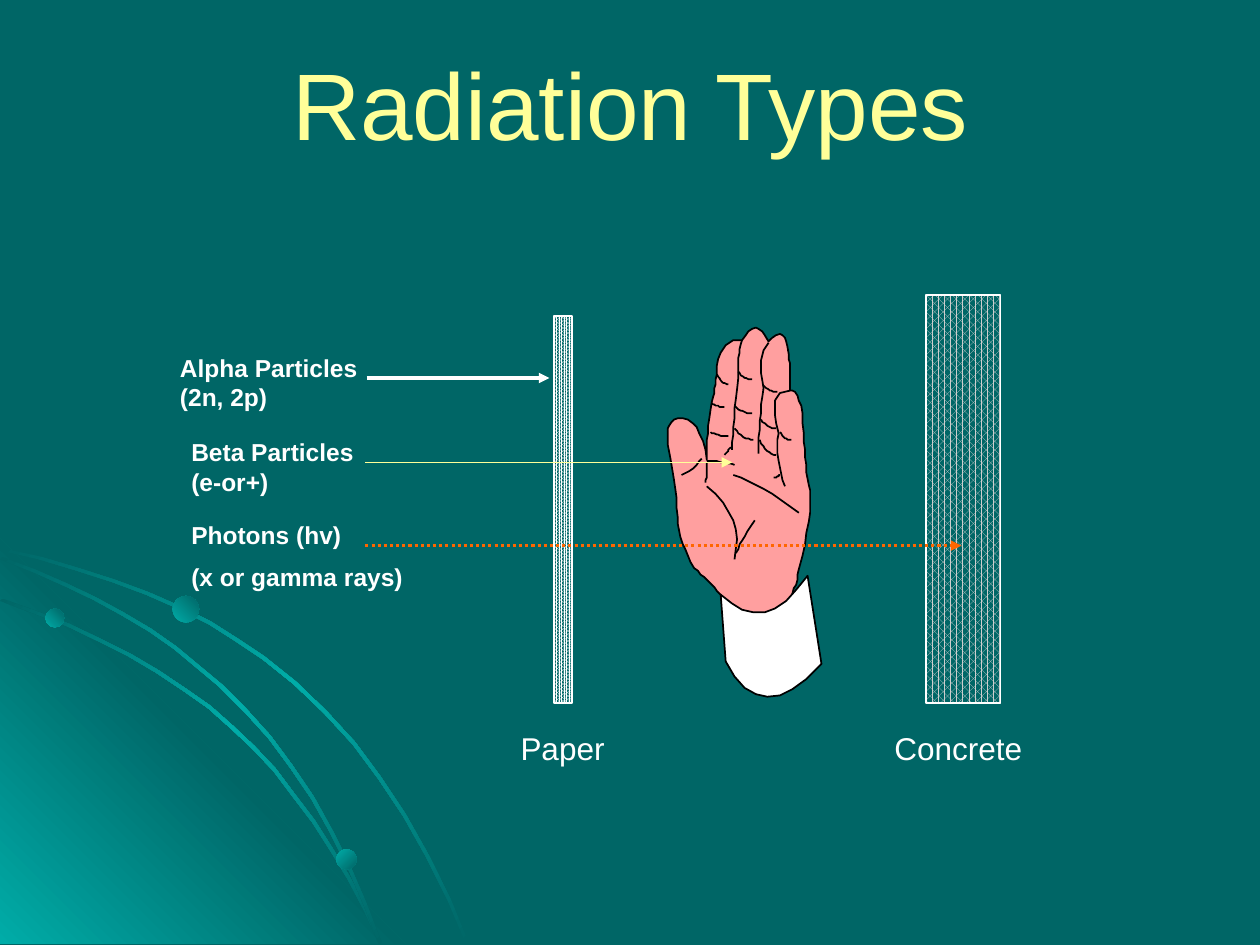
from copy import deepcopy
from pptx import Presentation
from pptx.dml.color import RGBColor
from pptx.enum.dml import MSO_LINE as DASH, MSO_PATTERN as PAT
from pptx.enum.shapes import MSO_CONNECTOR as CONN, MSO_SHAPE as SHAPE
from pptx.enum.text import MSO_ANCHOR as ANCHOR, PP_ALIGN as ALIGN
from pptx.oxml.ns import qn
from pptx.oxml.xmlchemy import OxmlElement as Elem
from pptx.util import Inches, Pt

TEAL = RGBColor(0x00, 0x66, 0x66)
AQUA = RGBColor(0x00, 0xAC, 0xA8)
CREAM = RGBColor(0xFF, 0xFF, 0x99)
WHITE = RGBColor(0xFF, 0xFF, 0xFF)
BLACK = RGBColor(0x00, 0x00, 0x00)
SKIN = RGBColor(0xFF, 0x9F, 0x9F)
GREY = RGBColor(0xCE, 0xCE, 0xCE)
RUST = RGBColor(0xFF, 0x66, 0x00)

deck = Presentation()
deck.slide_width, deck.slide_height = Inches(10), Inches(7.5)
slide = deck.slides.add_slide(deck.slide_layouts[5])
slide.background.fill.solid()
slide.background.fill.fore_color.rgb = TEAL
shapes = slide.shapes


def bend(knots, steps=8):
    points = [knots[0]]
    for start, pull, end in zip(knots[::2], knots[1::2], knots[2::2]):
        for step in range(1, steps + 1):
            t = step / steps
            points.append(tuple(round((1 - t) ** 2 * a + 2 * t * (1 - t) * b + t * t * c)
                                for a, b, c in zip(start, pull, end)))
    return points


def trace(points, close):
    pen = shapes.build_freeform(*points[0], scale=Inches(0.01))
    pen.add_line_segments(points[1:], close=close)
    shape = pen.convert_to_shape()
    shape.shadow.inherit = False
    return shape


arcs = [
    [(0, 436), (128, 463), (208, 522), (312, 599), (370, 749)],
    [(0, 476), (112, 513), (183, 577), (253, 640), (301, 749)],
    [(0, 443), (106, 481), (174, 544), (256, 620), (301, 749)]]
glows = [(trace([(0, 427), (322, 749), (0, 749)], True), (AQUA, TEAL, AQUA), 45)]
for arc in arcs:
    points = bend(arc)
    upper = [(x + 2, y - 1) for x, y in points]
    lower = [(x, y + 1) for x, y in reversed(points)]
    glows.append((trace(upper + lower, True), (TEAL, AQUA, TEAL), 315))
for x, y, size, angle in [(0.36, 4.83, 0.15, 45), (2.67, 6.74, 0.16, 315),
                          (1.37, 4.73, 0.21, 45)]:
    ball = shapes.add_shape(SHAPE.OVAL, Inches(x), Inches(y), Inches(size), Inches(size))
    ball.shadow.inherit = False
    glows.append((ball, (AQUA, TEAL), angle))

for shape, colors, angle in glows:
    shape.line.fill.background()
    fill = shape.fill
    fill.gradient()
    fill.gradient_angle = angle
    stops = shape._element.spPr.find(".//" + qn("a:gsLst"))
    if len(colors) == 3:
        stops.append(deepcopy(stops[0]))
    for i, (stop, color) in enumerate(zip(fill.gradient_stops, colors)):
        stop.color.rgb = color
        stop.position = i / (len(colors) - 1)

palm = [
    (593, 492), (580, 485), (572, 472), (562, 460), (551, 451), (539, 432), (538, 411),
    (536, 378), (531, 358), (526, 336), (538, 332), (556, 330), (561, 365), (560, 345),
    (565, 319), (569, 305), (569, 290), (573, 268), (589, 270), (600, 250), (610, 271),
    (624, 256), (626, 281), (628, 295), (627, 310), (636, 308), (638, 344), (639, 372),
    (643, 389), (645, 408), (634, 452), (632, 468), (624, 481), (611, 490), (593, 492)]
folds = [
    [(627, 310), (608, 310), (618, 344), (615, 366), (623, 386)],
    [(610, 272), (600, 283), (606, 308), (602, 335), (602, 360)],
    [(589, 270), (585, 283), (586, 300), (582, 335), (581, 357)],
    [(557, 364), (550, 374), (541, 377)],
    [(583, 369), (572, 366), (561, 366)],
    [(619, 377), (617, 379), (614, 379)],
    [(583, 444), (591, 411), (561, 386)],
    [(584, 439), (590, 425), (599, 413)],
    [(582, 377), (604, 385), (634, 407)],
    [(580, 355), (578, 358), (575, 361)],
    [(560, 383), (562, 374), (561, 367)]]
for x, y, width, drop in [(564, 343, 14, 3), (583, 340, 15, 9), (603, 349, 13, 12),
                          (565, 320, 10, 3), (583, 322, 14, 6), (586, 295, 11, 6),
                          (606, 306, 11, 5), (604, 333, 12, 7), (569, 297, 9, 8),
                          (619, 343, 9, 6)]:
    folds.append([(x, y), (x + width * 0.4, y + drop), (x + width, y + drop)])
cuff = (bend([(572, 472), (607, 507), (641, 457)])
        + bend([(652, 527), (604, 580), (576, 525)]))
for points, color in [(bend(palm), SKIN), *((bend(fold), None) for fold in folds),
                      (cuff, WHITE)]:
    part = trace(points, color is not None)
    part.line.color.rgb = BLACK
    part.line.width = Pt(1)
    if color is None:
        part.fill.background()
    else:
        part.fill.solid()
        part.fill.fore_color.rgb = color

for x, y, width, height, weave, color in [(4.4, 2.51, 0.14, 3.07, PAT.PERCENT_90, WHITE),
                                          (7.35, 2.34, 0.59, 3.24, PAT.PERCENT_70, GREY)]:
    wall = shapes.add_shape(SHAPE.RECTANGLE, Inches(x), Inches(y), Inches(width), Inches(height))
    wall.shadow.inherit = False
    wall.fill.patterned()
    wall.fill.pattern = weave
    wall.fill.fore_color.rgb = color
    wall.fill.back_color.rgb = TEAL
    wall.line.color.rgb = WHITE
    wall.line.width = Pt(1)

for left, right, y, color, width, dash in [(2.91, 4.36, 3, WHITE, 2, None),
                                           (2.9, 5.81, 3.67, CREAM, 1, None),
                                           (2.9, 7.63, 4.33, RUST, 1.75, DASH.ROUND_DOT)]:
    ray = shapes.add_connector(CONN.STRAIGHT, Inches(left), Inches(y), Inches(right), Inches(y))
    ray.line.color.rgb = color
    ray.line.width = Pt(width)
    if dash:
        ray.line.dash_style = dash
    head = Elem("a:tailEnd")
    head.set("type", "triangle")
    ray._element.spPr.find(qn("a:ln")).append(head)
    ray._element.spPr.append(Elem("a:effectLst"))

for x, y, width, height, lines, size, bold, align in [
        (1.33, 2.75, 1.81, 0.56, ["Alpha Particles (2n, 2p)"], 14, True, ALIGN.LEFT),
        (1.42, 3.42, 1.67, 0.56, ["Beta Particles (e-or+)"], 14, True, ALIGN.LEFT),
        (1.42, 4.08, 2.07, 0.68, ["Photons (hv)", "(x or gamma rays)"], 14, True, ALIGN.LEFT),
        (4, 5.74, 0.93, 0.4, ["Paper"], 18, False, ALIGN.CENTER),
        (7, 5.74, 1.34, 0.4, ["Concrete"], 18, False, ALIGN.LEFT)]:
    frame = shapes.add_textbox(Inches(x), Inches(y), Inches(width), Inches(height)).text_frame
    frame.word_wrap = True
    frame.text = "\n".join(lines)
    for i, para in enumerate(frame.paragraphs):
        para.alignment = align
        para.space_before = Pt(size / 2 if i else 0)
        font = para.font
        font.name, font.size, font.bold = "Arial", Pt(size), bold
        font.color.rgb = WHITE

title = shapes.title
title.left, title.top = Inches(1.44), Inches(0.42)
title.width, title.height = Inches(7.12), Inches(0.91)
title.text_frame.text = "Radiation Types"
title.text_frame.vertical_anchor = ANCHOR.MIDDLE
para = title.text_frame.paragraphs[0]
para.alignment = ALIGN.CENTER
para.line_spacing = 0.9
para.font.name, para.font.size = "Arial", Pt(54)
para.font.color.rgb = CREAM

deck.save("out.pptx")
